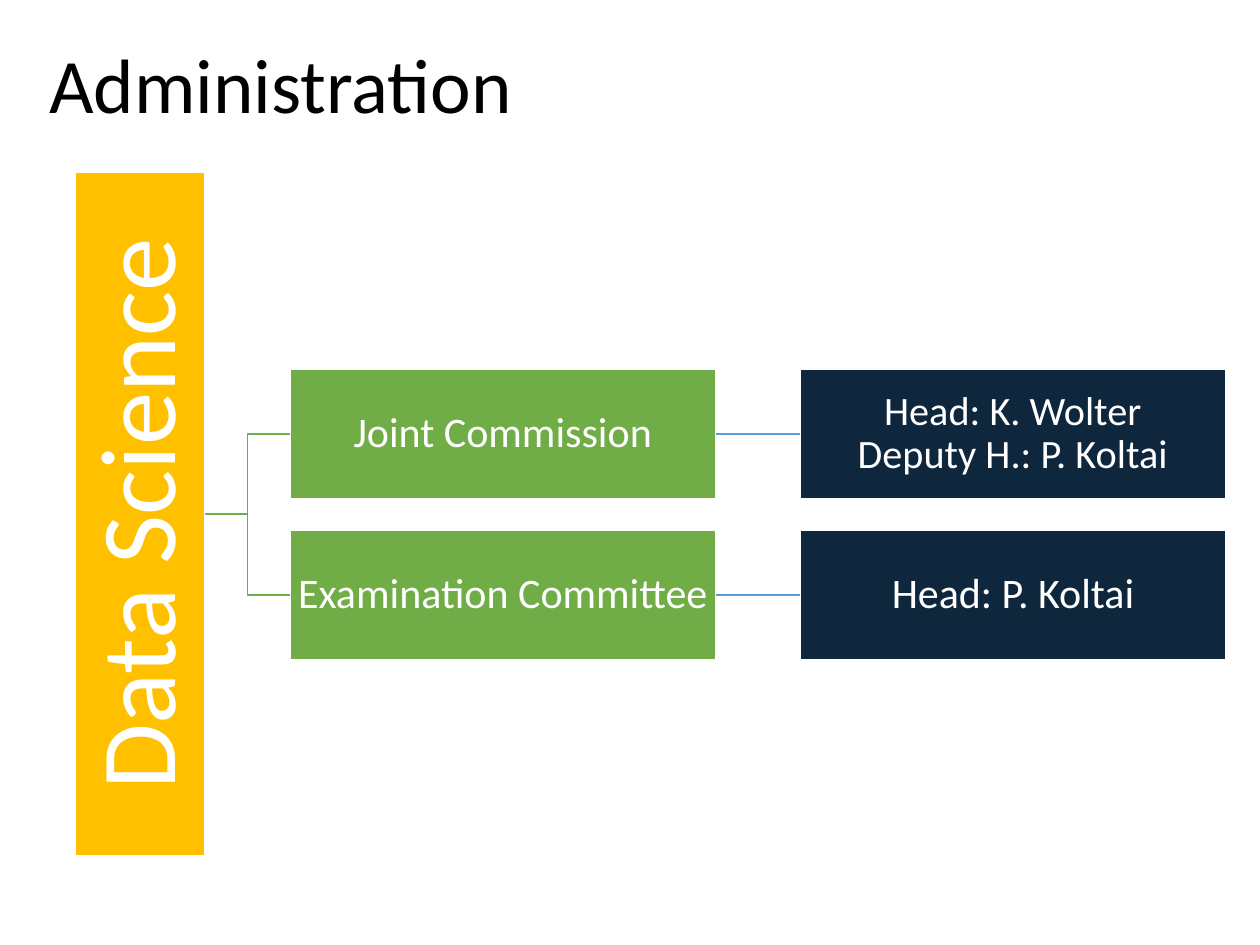
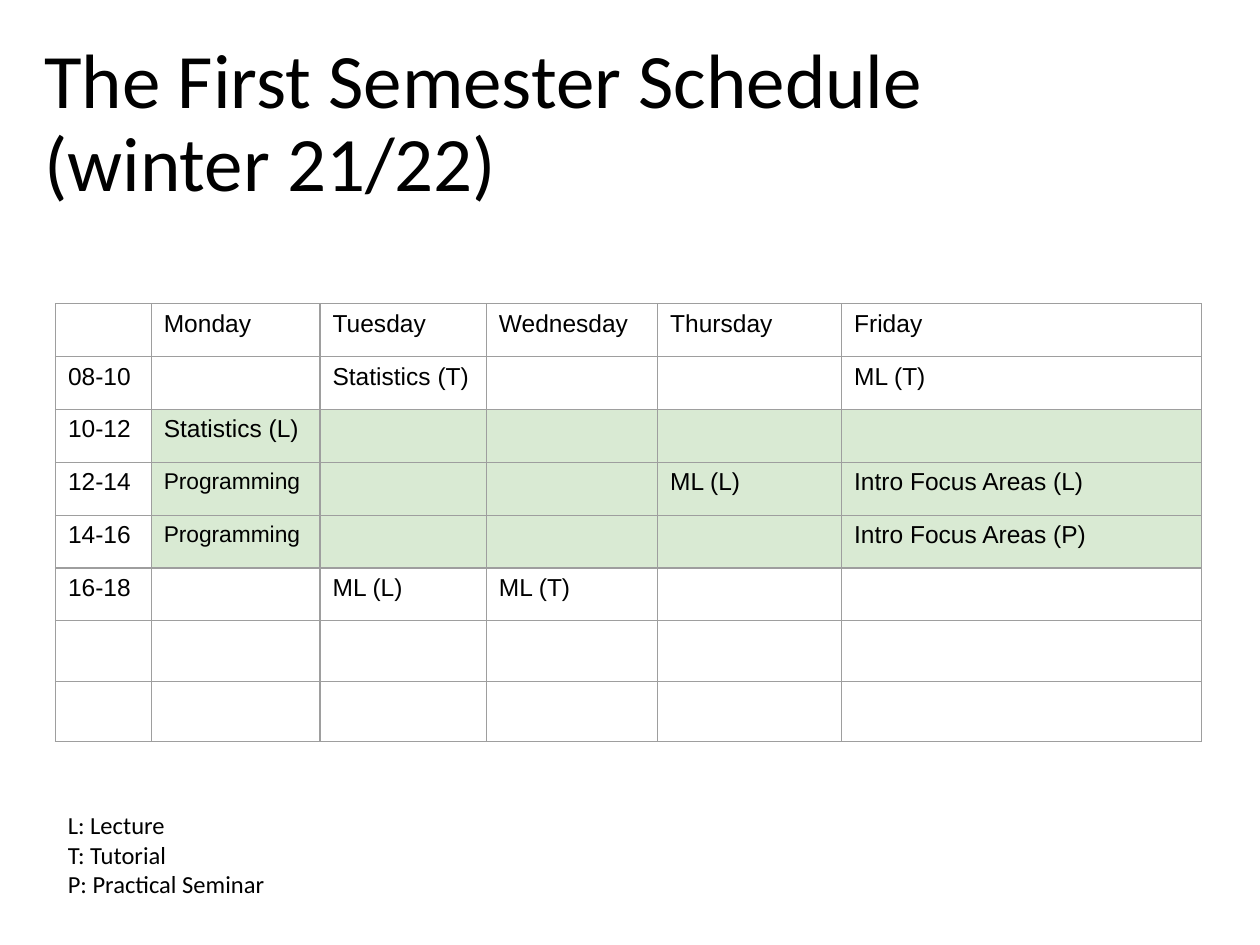
from dataclasses import dataclass

from lxml import etree
from pptx import Presentation
from pptx.dml.color import RGBColor
from pptx.enum.shapes import MSO_CONNECTOR, MSO_SHAPE
from pptx.enum.text import MSO_ANCHOR, MSO_AUTO_SIZE, PP_ALIGN
from pptx.oxml.ns import qn
from pptx.util import Inches, Pt

RECTANGLE = MSO_SHAPE.RECTANGLE
STRAIGHT, ELBOW = MSO_CONNECTOR.STRAIGHT, MSO_CONNECTOR.ELBOW
LEFT, CENTER = PP_ALIGN.LEFT, PP_ALIGN.CENTER
MIDDLE, TOP = MSO_ANCHOR.MIDDLE, MSO_ANCHOR.TOP
NO_AUTOFIT = MSO_AUTO_SIZE.NONE
LEFT_SIDE, RIGHT_SIDE = 1, 3
TITLE_ONLY = 5

BLACK, WHITE = "000000", "FFFFFF"
AMBER, GREEN, NAVY, BLUE = "FFC000", "70AD47", "0F273C", "599BD5"
PALE_GREEN, GRAY = "D9EAD3", "9E9E9E"
BODY_FONT, TABLE_FONT = "Calibri", "Arial"

BOX_WIDTH, BOX_HEIGHT = 3.38, 1.03
ROOT_LEFT, ROOT_TOP, ROOT_HEIGHT = 0.6, 1.37, 5.42
BODY_LEFT, PEOPLE_LEFT = 2.3, 6.35
FIRST_BODY_TOP, BODY_PITCH = 2.93, 1.28

COLUMN_WIDTHS = [0.76, 1.34, 1.32, 1.36, 1.46, 2.86]
ROW_HEIGHTS = [0.42] * 6 + [0.48] * 2
SCHEDULE = [
    ["", "Monday", "Tuesday", "Wednesday", "Thursday", "Friday"],
    ["08-10", "", "Statistics (T)", "", "", "ML (T)"],
    ["10-12", "Statistics (L)", "", "", "", ""],
    ["12-14", "Programming", "", "", "ML (L)", "Intro Focus Areas (L)"],
    ["14-16", "Programming", "", "", "", "Intro Focus Areas (P)"],
    ["16-18", "", "ML (L)", "ML (T)", "", ""],
    [""] * 6,
    [""] * 6,
]
CORE_ROWS = range(2, 5)


@dataclass
class Box:
    text: str
    left: float
    top: float
    width: float
    height: float
    fill: str
    size: float
    inset: float = 0.02


@dataclass
class Body:
    name: str
    people: str
    people_size: float


BODIES = [
    Body("Joint Commission", "Head: K. Wolter\vDeputy H.: P. Koltai", 23),
    Body("Examination Committee", "Head: P. Koltai", 24),
]


def color(value: str) -> RGBColor:
    return RGBColor.from_string(value)


def format_text(frame, size: float, ink: str = BLACK, font: str = BODY_FONT,
                align=LEFT, spacing: float = 1.0) -> None:
    for paragraph in frame.paragraphs:
        paragraph.alignment = align
        paragraph.line_spacing = spacing
        paragraph.font.name = font
        paragraph.font.size = Pt(size)
        paragraph.font.color.rgb = color(ink)


def set_insets(frame, inset: float) -> None:
    frame.margin_left = frame.margin_right = Inches(inset)
    frame.margin_top = frame.margin_bottom = Inches(inset)


def add_titled_slide(presentation, text: str, left: float, top: float, height: float):
    slide = presentation.slides.add_slide(presentation.slide_layouts[TITLE_ONLY])
    title = slide.shapes.title
    title.left, title.top = Inches(left), Inches(top)
    title.width, title.height = Inches(8.62), Inches(height)
    frame = title.text_frame
    frame.text = text
    frame.auto_size = NO_AUTOFIT
    frame.vertical_anchor = MIDDLE
    format_text(frame, 44, spacing=0.9)
    return slide


def add_box(slide, box: Box):
    shape = slide.shapes.add_shape(RECTANGLE, Inches(box.left), Inches(box.top),
                                   Inches(box.width), Inches(box.height))
    shape.shadow.inherit = False
    shape.fill.solid()
    shape.fill.fore_color.rgb = color(box.fill)
    shape.line.color.rgb = color(WHITE)
    shape.line.width = Pt(1)
    frame = shape.text_frame
    frame.text = box.text
    frame.word_wrap = True
    frame.vertical_anchor = MIDDLE
    set_insets(frame, box.inset)
    format_text(frame, box.size, WHITE, align=CENTER, spacing=0.9)
    return shape


def join(slide, kind, start, end, ink: str) -> None:
    connector = slide.shapes.add_connector(kind, 0, 0, 0, 0)
    connector.begin_connect(start, RIGHT_SIDE)
    connector.end_connect(end, LEFT_SIDE)
    connector.line.color.rgb = color(ink)
    connector.line.width = Pt(1)
    etree.SubElement(connector._element.spPr, qn("a:effectLst"))


def add_borders(cell) -> None:
    properties = cell._tc.get_or_add_tcPr()
    for side in ("a:lnL", "a:lnR", "a:lnT", "a:lnB"):
        line = etree.SubElement(properties, qn(side), w=str(Pt(0.75)))
        fill = etree.SubElement(line, qn("a:solidFill"))
        etree.SubElement(fill, qn("a:srgbClr"), val=GRAY)


def add_schedule(slide) -> None:
    frame = slide.shapes.add_table(len(ROW_HEIGHTS), len(COLUMN_WIDTHS), Inches(0.44), Inches(2.41),
                                   Inches(sum(COLUMN_WIDTHS)), Inches(sum(ROW_HEIGHTS)))
    table = frame.table
    table.first_row = table.horz_banding = False
    for column, width in zip(table.columns, COLUMN_WIDTHS):
        column.width = Inches(width)
    for row, height in zip(table.rows, ROW_HEIGHTS):
        row.height = Inches(height)
    for row_index, texts in enumerate(SCHEDULE):
        for column_index, text in enumerate(texts):
            cell = table.cell(row_index, column_index)
            cell.text = text
            cell.vertical_anchor = TOP
            format_text(cell.text_frame, 13 if text == "Programming" else 14, font=TABLE_FONT)
            add_borders(cell)
            if row_index in CORE_ROWS and column_index > 0:
                cell.fill.solid()
                cell.fill.fore_color.rgb = color(PALE_GREEN)
            else:
                cell.fill.background()


def build_administration(presentation) -> None:
    slide = add_titled_slide(presentation, "Administration", 0.29, 0.25, 0.9)
    root = add_box(slide, Box("Data Science", ROOT_LEFT, ROOT_TOP, BOX_HEIGHT, ROOT_HEIGHT,
                              AMBER, 61, 0.04))
    root.text_frame._txBody.bodyPr.set("vert", "vert270")
    for index, body in enumerate(BODIES):
        top = FIRST_BODY_TOP + index * BODY_PITCH
        name = add_box(slide, Box(body.name, BODY_LEFT, top, BOX_WIDTH, BOX_HEIGHT, GREEN, 24))
        people = add_box(slide, Box(body.people, PEOPLE_LEFT, top, BOX_WIDTH, BOX_HEIGHT,
                                    NAVY, body.people_size))
        join(slide, ELBOW, root, name, GREEN)
        join(slide, STRAIGHT, name, people, BLUE)


def build_schedule(presentation) -> None:
    slide = add_titled_slide(presentation, "The First Semester Schedule\v(winter 21/22)",
                             0.25, 0.27, 1.45)
    add_schedule(slide)
    legend = slide.shapes.add_textbox(Inches(0.44), Inches(6.33), Inches(2.77), Inches(1.08))
    frame = legend.text_frame
    frame.text = "L: Lecture\nT: Tutorial\nP: Practical Seminar"
    frame.word_wrap = True
    set_insets(frame, 0.1)
    format_text(frame, 14)


def main() -> None:
    presentation = Presentation()
    presentation.slide_width, presentation.slide_height = Inches(10), Inches(7.5)
    build_administration(presentation)
    build_schedule(presentation)
    presentation.save("out.pptx")


if __name__ == "__main__":
    main()
